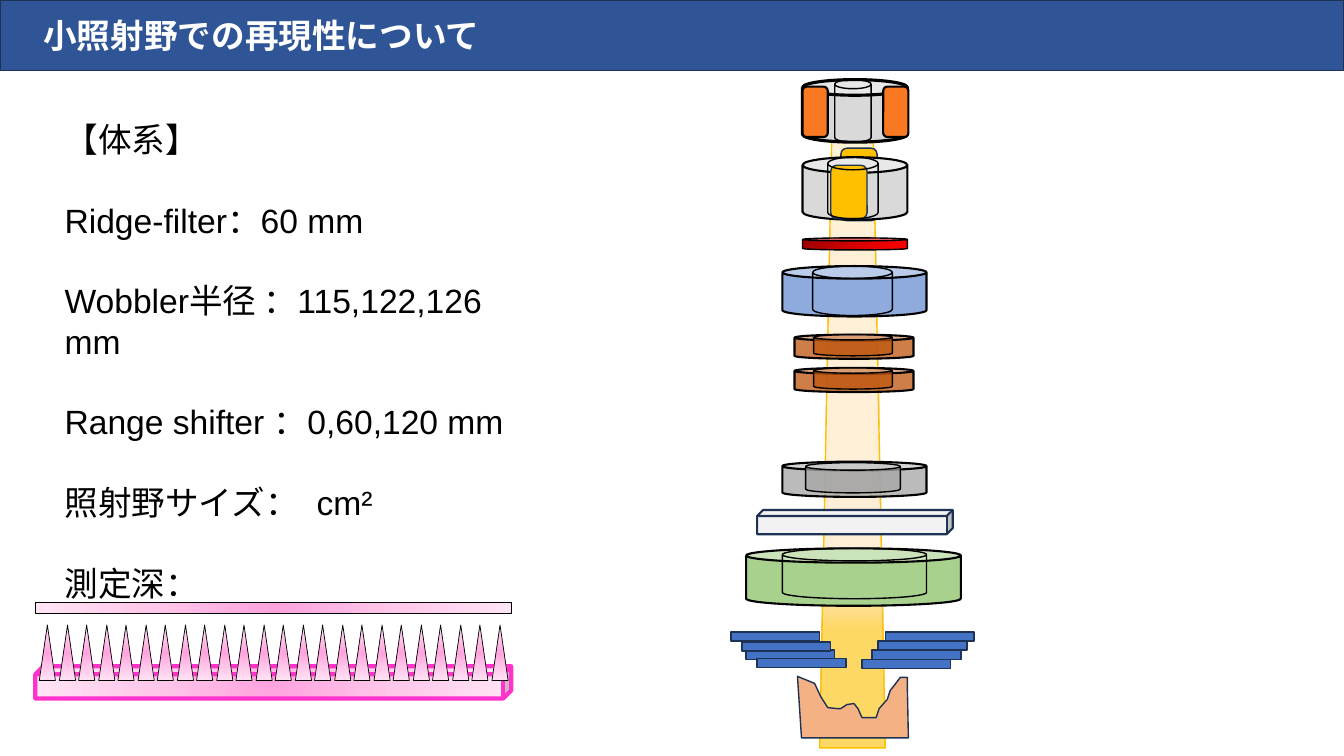
from lxml import etree
from pptx import Presentation
from pptx import util as u
from pptx.dml.color import RGBColor
from pptx.enum import shapes, text
from pptx.oxml.ns import qn

PX = 9144  # EMU per px, 100 px to the inch
KIND = shapes.MSO_SHAPE
NAVY, BLACK, GOLD, ORANGE_METAL = "1E3256", "000000", "FFC000", "BF5711"

# Gradients: stops as (position, colour, opacity) and a linear angle or None for radial
BEAM = {"stops": [(18, "FFD966", 100), (27, "FFE6C5", 67), (100, "FFF2CC", 77)], "angle": 90}
RED = {"stops": [(0, "970000", 100), (50, "D70000", 100), (100, "FF0000", 100)], "angle": 45}
ORANGE = {"stops": [(0, "954815", 96), (0, "D4671D", 100), (7, "FB7A23", 100)], "angle": 45}
PINK = {"stops": [(0, "FFA3DF", 100), (50, "FFC7EA", 100), (100, "FFE4F4", 100)], "angle": None}


def colour(value):
    return RGBColor.from_string(value)


def child(parent, tag, **attributes):
    return etree.SubElement(parent, qn(tag), {k: str(v) for k, v in attributes.items()})


def set_all(target, values):
    for name, value in values.items():
        setattr(target, name, value)


class SlideBuilder:
    font = {"name": "Arial", "size": u.Pt(24)}

    def __init__(self, slide):
        self.slide = slide

    def place(self, shape, box):
        set_all(shape, dict(zip(("left", "top", "width", "height"), (v * PX for v in box))))

    def gradient(self, shape, stops, angle):
        shape.fill.background()
        empty = shape._element.spPr.find(qn("a:noFill"))
        fill = etree.Element(qn("a:gradFill"), {"rotWithShape": "1"})
        stop_list = child(fill, "a:gsLst")
        for position, value, opacity in stops:
            stop = child(stop_list, "a:gs", pos=position * 1000)
            tint = child(stop, "a:srgbClr", val=value)
            if opacity < 100:
                child(tint, "a:alpha", val=opacity * 1000)
        if angle is None:
            centre = child(fill, "a:path", path="circle")
            child(centre, "a:fillToRect", l=50000, t=50000, r=50000, b=50000)
        else:
            child(fill, "a:lin", ang=angle * 60000, scaled=0)
        empty.getparent().replace(empty, fill)

    def paint(self, shape, fill, line, width, opacity=100):
        shape.shadow.inherit = False
        shape.line.color.rgb = colour(line)
        shape.line.width = u.Pt(width)
        if fill is None:
            shape.fill.background()
        elif isinstance(fill, dict):
            self.gradient(shape, **fill)
        else:
            shape.fill.solid()
            shape.fill.fore_color.rgb = colour(fill)
            if opacity < 100:
                tint = shape._element.spPr.find(qn("a:solidFill")).find(qn("a:srgbClr"))
                child(tint, "a:alpha", val=opacity * 1000)

    def shape(self, kind, box, fill, line=BLACK, width=1, opacity=100):
        shape = self.slide.shapes.add_shape(kind, *(v * PX for v in box))
        self.paint(shape, fill, line, width, opacity)
        return shape

    def outline(self, points, fill, line):
        builder = self.slide.shapes.build_freeform(*points[0], scale=PX)
        builder.add_line_segments(points[1:], close=True)
        self.paint(builder.convert_to_shape(), fill, line, 1)

    def add_words(self, paragraph, words, value, bold=False):
        run = paragraph.add_run()
        run.text = words
        set_all(run.font, {**self.font, "bold": bold})
        run.font.color.rgb = colour(value)

    def title(self, words, box):
        title = self.slide.shapes.title
        self.place(title, box)
        self.paint(title, "2F5597", NAVY, 1)
        set_all(title.text_frame, {"auto_size": text.MSO_AUTO_SIZE.NONE, "word_wrap": True,
                                   "vertical_anchor": text.MSO_ANCHOR.MIDDLE,
                                   "margin_left": 43 * PX})
        paragraph = title.text_frame.paragraphs[0]
        paragraph.alignment = text.PP_ALIGN.LEFT
        self.add_words(paragraph, words, "FFFFFF", bold=True)

    def body(self, lines, box, gap, tab):
        body = self.slide.placeholders[1]
        self.place(body, box)
        frame = body.text_frame
        set_all(frame, {"auto_size": text.MSO_AUTO_SIZE.NONE, "word_wrap": True,
                        "vertical_anchor": text.MSO_ANCHOR.TOP})
        for index, words in enumerate(lines):
            paragraph = frame.add_paragraph() if index else frame.paragraphs[0]
            properties = paragraph._p.get_or_add_pPr()
            properties.set("marL", "0")
            properties.set("indent", "0")
            child(properties, "a:buNone")
            if "\t" in words:
                child(child(properties, "a:tabLst"), "a:tab", pos=tab * PX, algn="l")
            paragraph.space_before = u.Pt(gap if index else 0)
            self.add_words(paragraph, words, BLACK)


def main():
    presentation = Presentation()
    presentation.slide_width, presentation.slide_height = 1333 * PX, 750 * PX
    slide = SlideBuilder(presentation.slides.add_slide(presentation.slide_layouts[1]))

    # Heading and setup list
    slide.title("小照射野での再現性について", (0, 0, 1333, 70))
    slide.body(["【体系】", "Ridge-filter：60 mm", "Wobbler半径 ：115,122,126 mm",
                "Range shifter ：0,60,120 mm", "照射野サイズ：\tcm²", "測定深："],
               (54, 113, 493, 454), gap=28.8, tab=281)

    # Beam
    beam = slide.shape(KIND.FLOWCHART_MANUAL_OPERATION, (813, 81, 65, 661), BEAM, GOLD)
    beam.rotation = 180

    # Wobbler magnets and scatterer
    slide.shape(KIND.ROUNDED_RECTANGLE, (834, 147, 36, 72), GOLD, NAVY)
    slide.shape(KIND.CAN, (796, 79, 104, 62), "D9D9D9", width=2.25)
    slide.shape(KIND.CAN, (796, 236, 104, 12), RED)
    slide.shape(KIND.CAN, (796, 156, 104, 62), "D9D9D9", width=1.5)
    slide.shape(KIND.ROUNDED_RECTANGLE, (824, 164, 36, 53), GOLD, NAVY)
    slide.shape(KIND.CAN, (828, 79, 36, 62), None)
    slide.shape(KIND.CAN, (821, 156, 50, 61), None)
    for left in (796, 876):
        slide.shape(KIND.ROUNDED_RECTANGLE, (left, 86, 25, 50), ORANGE, width=1.5)

    # Rings: outer box, inner box, outer fill, inner fill, opacity
    rings = [((776, 264, 143, 50), (806, 264, 79, 49), "8FAADC", None, 100),
             ((740, 544, 213, 57), (776, 544, 143, 50), "A9D18E", None, 100),
             ((788, 332, 118, 24), (807, 332, 78, 21), ORANGE_METAL, ORANGE_METAL, 76),
             ((788, 365, 118, 24), (807, 365, 78, 21), ORANGE_METAL, ORANGE_METAL, 76),
             ((776, 458, 143, 35), (799, 459, 94, 30), "A6A6A6", "A6A6A6", 76)]
    for outer, inner, outer_fill, inner_fill, opacity in rings:
        slide.shape(KIND.CAN, outer, outer_fill, width=1.5, opacity=opacity)
        slide.shape(KIND.CAN, inner, inner_fill, opacity=opacity)

    # Range shifter plate
    slide.shape(KIND.CUBE, (751, 506, 194, 24), "F2F2F2", NAVY, 1.5)

    # Ridge filter
    slide.shape(KIND.CUBE, (35, 661, 472, 32), PINK, "FF33CC", 3)
    ridges, first, last = 24, 39, 488
    for index in range(ridges):
        left = round(first + (last - first) * index / (ridges - 1))
        slide.shape(KIND.ISOSCELES_TRIANGLE, (left, 620, 16, 55), PINK, width=0.5)
    slide.shape(KIND.RECTANGLE, (35, 598, 472, 11), PINK, width=0.5)

    # Collimator leaves
    for left, top in [(740, 645), (725, 627), (878, 627), (751, 653),
                      (855, 654), (865, 645), (871, 636), (736, 637)]:
        slide.shape(KIND.RECTANGLE, (left, top, 88, 9), "4472C4", NAVY)

    # Bolus
    slide.outline([(791, 671), (808, 678), (814, 691), (821, 702), (830, 703), (834, 703),
                   (840, 699), (847, 698), (851, 703), (855, 712), (862, 712), (869, 712),
                   (872, 703), (880, 694), (883, 685), (887, 680), (893, 672), (900, 672),
                   (900, 682), (901, 732), (803, 732), (795, 732)], "F4B183", NAVY)

    presentation.save("out.pptx")


if __name__ == "__main__":
    main()
